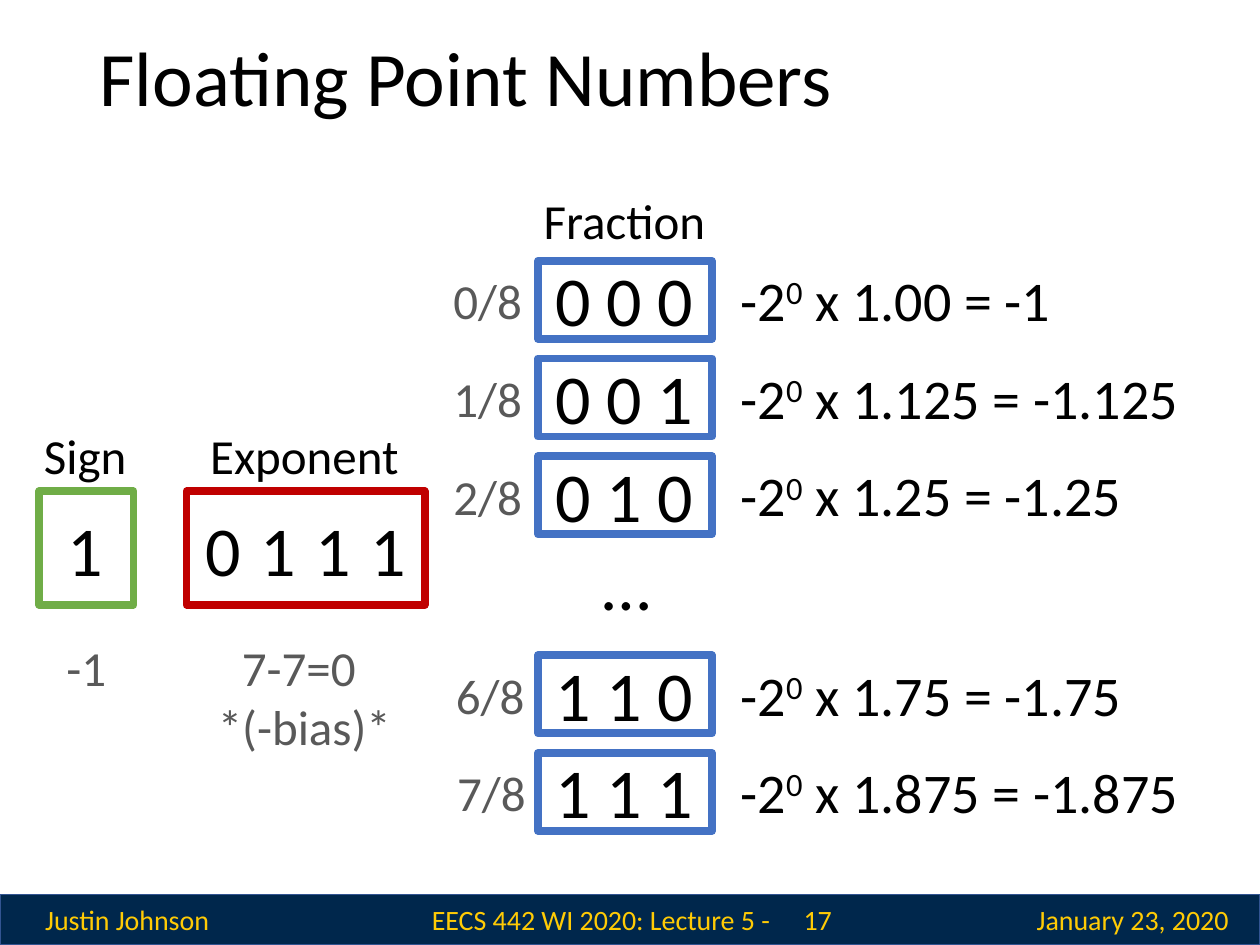
from dataclasses import dataclass

from pptx import Presentation
from pptx import util as u
from pptx.dml.color import RGBColor
from pptx.enum import shapes, text


@dataclass(frozen=True)
class Theme:
    """Colours, font and type sizes of the slide."""
    font: str = "Calibri"
    ink: str = "000000"
    muted: str = "595959"
    navy: str = "00274C"
    navy_edge: str = "325491"
    maize: str = "FFCB05"
    green: str = "70AD47"
    red: str = "C00000"
    blue: str = "4472C4"
    title: int = 44
    digit: int = 40
    formula: int = 32
    label: int = 28
    footer: int = 16
    frame_line: float = 4.5


THEME = Theme()
ALIGN = text.PP_ALIGN
ANCHOR = text.MSO_ANCHOR
DIGIT_WIDTH = 0.56
DIGIT_HEIGHT = 0.77
ROW_PITCH = 0.775
FRACTION_ROWS = [
    (1.99, 3.36, "000", "1.00 = -1"),
    (1.99 + ROW_PITCH, 3.36, "001", "1.125 = -1.125"),
    (1.99 + 2 * ROW_PITCH, 3.36, "010", "1.25 = -1.25"),
    (5.12, 3.38, "110", "1.75 = -1.75"),
    (5.12 + ROW_PITCH, 3.39, "111", "1.875 = -1.875"),
]


def style_run(span, size, color):
    """Give a run its font, size and colour."""
    span.font.name = THEME.font
    span.font.size = u.Pt(size)
    span.font.color.rgb = RGBColor.from_string(color)


def add_text(slide, place, lines, size, color=THEME.ink, align=ALIGN.CENTER, anchor=ANCHOR.TOP):
    """Add a wrapping text box with one paragraph per line and return it."""
    box = slide.shapes.add_textbox(*map(u.Inches, place))
    frame = box.text_frame
    frame.word_wrap = True
    frame.vertical_anchor = anchor
    frame.text = "\n".join(lines)
    for para in frame.paragraphs:
        para.alignment = align
        for span in para.runs:
            style_run(span, size, color)
    return box


def add_frame(slide, place, line, width=THEME.frame_line, fill=None):
    """Add an outlined rectangle, filled only when a fill is given."""
    frame = slide.shapes.add_shape(shapes.MSO_SHAPE.RECTANGLE, *map(u.Inches, place))
    frame.shadow.inherit = False
    frame.line.color.rgb = RGBColor.from_string(line)
    frame.line.width = u.Pt(width)
    if fill:
        frame.fill.solid()
        frame.fill.fore_color.rgb = RGBColor.from_string(fill)
    else:
        frame.fill.background()


def add_bits(slide, left, top, pitch, bits):
    """Add one digit box per bit at an equal pitch."""
    for index, bit in enumerate(bits):
        place = (left + index * pitch, top, DIGIT_WIDTH, DIGIT_HEIGHT)
        add_text(slide, place, [bit], THEME.digit)


def add_formula(slide, left, top, result):
    """Add the value of a row, with its exponent raised."""
    box = add_text(slide, (left, top, 4.37, 0.64), ["-2"], THEME.formula, align=ALIGN.LEFT)
    para = box.text_frame.paragraphs[0]
    for content in ("0", f" x {result}"):
        span = para.add_run()
        span.text = content
        style_run(span, THEME.formula, THEME.ink)
    para.runs[1].font._element.set("baseline", "30000")


def add_fraction_row(slide, top, label_left, bits, result):
    """Add a fraction label, its framed bits and the resulting value."""
    add_bits(slide, 4.27, top, 0.405, bits)
    add_frame(slide, (4.27, top + 0.08, 1.38, 0.62), THEME.blue)
    add_formula(slide, 5.78, top + 0.07, result)
    add_text(slide, (label_left, top + 0.11, 0.88, 0.57), [f"{int(bits, 2)}/8"],
             THEME.label, THEME.muted, ALIGN.RIGHT)


def add_sign_and_exponent(slide):
    """Add the sign and exponent fields with their meanings."""
    add_bits(slide, 0.4, 3.97, 0, "1")
    add_bits(slide, 1.49, 3.97, 0.437, "0111")
    add_frame(slide, (0.31, 3.9, 0.75, 0.9), THEME.green)
    add_frame(slide, (1.48, 3.9, 1.89, 0.9), THEME.red)
    add_text(slide, (1.47, 5.01, 1.89, 1.04), ["7-7=0 ", "*(-bias)*"], THEME.label, THEME.muted)
    add_text(slide, (0.15, 5.01, 1.07, 0.57), ["-1"], THEME.label, THEME.muted)


def add_footer(slide):
    """Add the footer band and its texts."""
    add_frame(slide, (0, 7.1, 10, 0.4), THEME.navy_edge, 1, THEME.navy)
    for left, width, content in [
        (0.01, 2, "Justin Johnson"),
        (7.99, 2, "January 23, 2020"),
        (3.3, 2.99, "EECS 442 WI 2020: Lecture 5 - "),
        (6.05, 0.88, "17"),
    ]:
        add_text(slide, (left, 7.1, width, 0.4), [content], THEME.footer, THEME.maize,
                 anchor=ANCHOR.MIDDLE)


def set_title(slide, content):
    """Place and format the title placeholder."""
    title = slide.shapes.title
    title.left, title.top, title.width, title.height = map(u.Inches, (0.69, 0.2, 8.62, 0.9))
    frame = title.text_frame
    frame.text = content
    frame.auto_size = text.MSO_AUTO_SIZE.NONE
    frame.vertical_anchor = ANCHOR.MIDDLE
    para = frame.paragraphs[0]
    para.alignment = ALIGN.LEFT
    para.line_spacing = 0.9
    style_run(para.runs[0], THEME.title, THEME.ink)


def main():
    """Build the slide and save the deck."""
    deck = Presentation()
    deck.slide_width, deck.slide_height = u.Inches(10), u.Inches(7.5)
    slide = deck.slides.add_slide(deck.slide_layouts[5])
    add_footer(slide)
    set_title(slide, "Floating Point Numbers")
    for left, top, width, heading in [
        (0.12, 3.33, 1.11, "Sign"),
        (1.47, 3.33, 1.89, "Exponent"),
        (3.58, 1.46, 2.75, "Fraction"),
    ]:
        add_text(slide, (left, top, width, 0.57), [heading], THEME.label)
    for row in FRACTION_ROWS:
        add_fraction_row(slide, *row)
    add_text(slide, (4.43, 4.24, 1.08, DIGIT_HEIGHT), ["…"], THEME.digit)
    add_sign_and_exponent(slide)
    deck.save("out.pptx")


if __name__ == "__main__":
    main()
